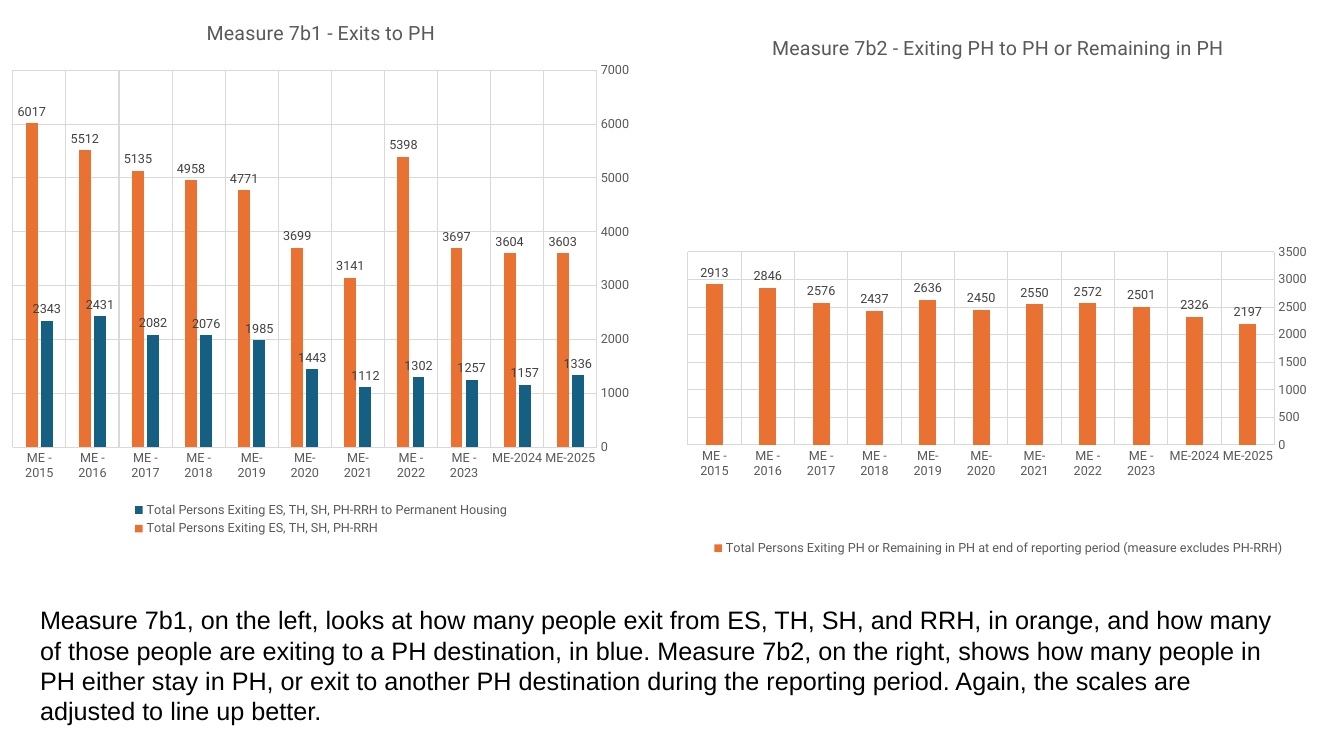
from lxml.etree import SubElement
from pptx import Presentation
from pptx.chart.data import CategoryChartData
from pptx.dml.color import RGBColor
from pptx.enum.chart import XL_CHART_TYPE, XL_LABEL_POSITION, XL_LEGEND_POSITION, XL_TICK_MARK
from pptx.oxml.ns import qn
from pptx.util import Cm, Pt

COLORS = {"blue": "156082", "orange": "E97132", "grid": "D9D9D9",
          "muted": "595959", "label": "404040", "text": "000000"}
YEARS = ["ME-2025", "ME-2024", "ME - 2023", "ME - 2022", "ME- 2021", "ME- 2020",
         "ME- 2019", "ME - 2018", "ME - 2017", "ME - 2016", "ME - 2015"]
EXITS = [
    ("Total Persons Exiting ES, TH, SH, PH-RRH to Permanent Housing", "blue",
     [1336, 1157, 1257, 1302, 1112, 1443, 1985, 2076, 2082, 2431, 2343]),
    ("Total Persons Exiting ES, TH, SH, PH-RRH", "orange",
     [3603, 3604, 3697, 5398, 3141, 3699, 4771, 4958, 5135, 5512, 6017]),
]
REMAINING = [
    ("Total Persons Exiting PH or Remaining in PH at end of reporting period "
     "(measure excludes PH-RRH)", "orange",
     [2197, 2326, 2501, 2572, 2550, 2450, 2636, 2437, 2576, 2846, 2913]),
]
EXPLANATION = (
    "Measure 7b1, on the left, looks at how many people exit from ES, TH, SH, and RRH, "
    "in orange, and how many of those people are exiting to a PH destination, in blue. "
    "Measure 7b2, on the right, shows how many people in PH either stay in PH, or exit to "
    "another PH destination during the reporting period. Again, the scales are adjusted "
    "to line up better."
)


def assign(target, **values):
    for name, value in values.items():
        setattr(target, name, value)


class MeasureSlide:
    """Holds the shared style and the slide that its charts and text go on."""

    def __init__(self, slide):
        self.slide = slide

    def color(self, key):
        return RGBColor.from_string(COLORS[key])

    def style_font(self, font, size, color, name="Roboto"):
        assign(font, size=Pt(size), name=name, bold=False)
        font.color.rgb = self.color(color)

    def style_line(self, line):
        line.width = Pt(0.75)
        line.color.rgb = self.color("grid")

    def style_axis(self, axis):
        assign(axis, has_major_gridlines=True, major_tick_mark=XL_TICK_MARK.NONE,
               minor_tick_mark=XL_TICK_MARK.NONE)
        self.style_line(axis.major_gridlines.format.line)
        self.style_font(axis.tick_labels.font, 9, "muted")

    def place_plot(self, chart, plot_box):
        plot_area = chart.element.find(".//" + qn("c:plotArea"))
        for layout in plot_area.findall(qn("c:layout")):
            plot_area.remove(layout)
        layout = SubElement(plot_area, qn("c:layout"))
        plot_area.insert(0, layout)
        manual = SubElement(layout, qn("c:manualLayout"))
        settings = [("layoutTarget", "inner"), ("xMode", "edge"), ("yMode", "edge"),
                    *zip("xywh", plot_box)]
        for tag, value in settings:
            SubElement(manual, qn("c:" + tag)).set("val", str(value))

    def column_chart(self, title, measures, box, plot_box=None):
        data = CategoryChartData()
        data.categories = YEARS
        for name, _, counts in measures:
            data.add_series(name, counts)
        chart = self.slide.shapes.add_chart(
            XL_CHART_TYPE.COLUMN_CLUSTERED, *map(Cm, box), data).chart
        self.style_font(chart.font, 10, "text")
        assign(chart, has_title=True, has_legend=True)
        heading = chart.chart_title.text_frame
        heading.text = title
        self.style_font(heading.paragraphs[0].runs[0].font, 14, "muted")
        assign(chart.legend, position=XL_LEGEND_POSITION.BOTTOM, include_in_layout=False)
        self.style_font(chart.legend.font, 9, "muted")

        for axis in (chart.category_axis, chart.value_axis):
            self.style_axis(axis)
        chart.category_axis.reverse_order = True
        self.style_line(chart.category_axis.format.line)
        chart.value_axis.format.line.fill.background()

        plot = chart.plots[0]
        assign(plot, gap_width=219, overlap=-27, vary_by_categories=False)
        for series, (_, color, _) in zip(plot.series, measures):
            series.format.fill.solid()
            series.format.fill.fore_color.rgb = self.color(color)
            labels = series.data_labels
            assign(labels, show_value=True, position=XL_LABEL_POSITION.OUTSIDE_END)
            self.style_font(labels.font, 9, "label")
        if plot_box:
            self.place_plot(chart, plot_box)

    def text(self, wording, box):
        frame = self.slide.shapes.add_textbox(*map(Cm, box)).text_frame
        assign(frame, word_wrap=True, text=wording)
        self.style_font(frame.paragraphs[0].runs[0].font, 18, "text", "Arial")


def main():
    deck = Presentation()
    assign(deck, slide_width=Cm(33.87), slide_height=Cm(19.05))
    page = MeasureSlide(deck.slides.add_slide(deck.slide_layouts[6]))
    page.column_chart("Measure 7b1 - Exits to PH", EXITS, (0, 0, 16.18, 13.61))
    page.column_chart("Measure 7b2 - Exiting PH to PH or Remaining in PH", REMAINING,
                      (16.94, 0.36, 16.43, 13.74), (0.024, 0.436, 0.9, 0.354))
    page.text(EXPLANATION, (0.76, 15.11, 31.8, 2.57))
    deck.save("out.pptx")


if __name__ == "__main__":
    main()
